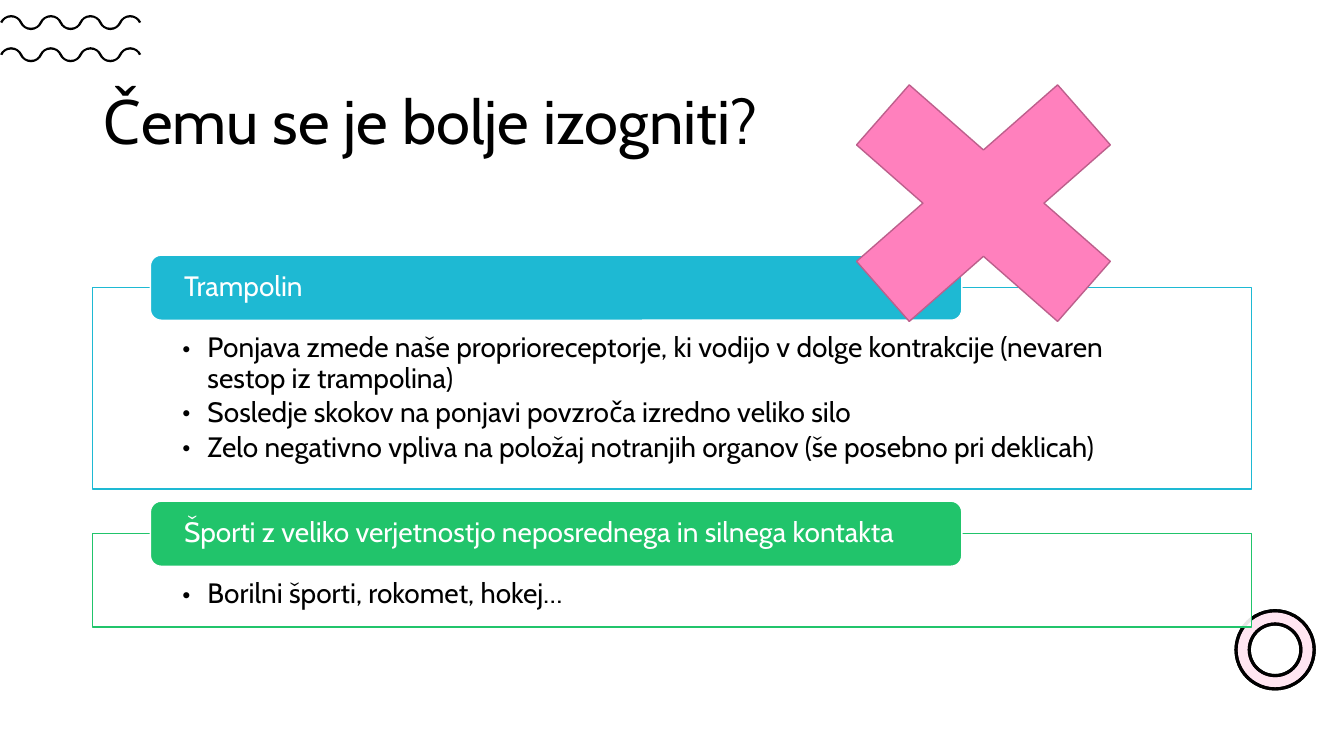
import math
from dataclasses import dataclass
from typing import NamedTuple

import lxml.etree
import pptx
import pptx.dml.color
import pptx.enum.shapes
import pptx.enum.text
import pptx.oxml.ns
import pptx.shapes.autoshape
import pptx.slide
import pptx.text.text
import pptx.util

Cm = pptx.util.Cm
qn = pptx.oxml.ns.qn
Preset = pptx.enum.shapes.MSO_SHAPE
Anchor = pptx.enum.text.MSO_ANCHOR


@dataclass(frozen=True)
class Theme:
    font: str = "Cabin"
    title_size: float = 44
    body_size: float = 20
    black: str = "000000"
    white: str = "FFFFFF"
    pink: str = "FF80BD"
    dark_pink: str = "BD5F8C"
    blue: str = "1EB9D3"
    green: str = "21C46B"


class Box(NamedTuple):
    """Position and size in centimetres."""
    left: float
    top: float
    width: float
    height: float


class Knot(NamedTuple):
    """A curve point and its outgoing handle, in centimetres."""
    x: float
    y: float
    handle_x: float
    handle_y: float


@dataclass(frozen=True)
class Section:
    heading: str
    bullets: tuple[str, ...]
    color: str
    height: float


THEME = Theme()
SECTIONS = (
    Section("Trampolin", (
        "Ponjava zmede naše proprioreceptorje, ki vodijo v dolge kontrakcije "
        "(nevaren sestop iz trampolina)",
        "Sosledje skokov na ponjavi povzroča izredno veliko silo",
        "Zelo negativno vpliva na položaj notranjih organov (še posebno pri deklicah)",
    ), THEME.blue, 5.08),
    Section("Športi z veliko verjetnostjo neposrednega in silnega kontakta",
            ("Borilni športi, rokomet, hokej…",), THEME.green, 2.36),
)
SLIDE_WIDTH, SLIDE_HEIGHT = 33.87, 19.05
SECTIONS_TOP, SECTION_GAP = 7.24, 1.12
MARGIN, CONTENT_WIDTH = 2.33, 29.21
WAVE_MIDDLES = (1.38, 0.57)


def rgb(color: str) -> pptx.dml.color.RGBColor:
    return pptx.dml.color.RGBColor.from_string(color)


def paint(shape: pptx.shapes.autoshape.Shape, fill: str, line: str | None = None,
          line_width: float = 1, opacity: int = 100) -> None:
    shape.shadow.inherit = False
    shape.fill.solid()
    shape.fill.fore_color.rgb = rgb(fill)
    if line is None:
        shape.line.fill.background()
    else:
        shape.line.color.rgb = rgb(line)
        shape.line.width = pptx.util.Pt(line_width)
    if opacity < 100:
        color = shape._element.spPr.find(qn("a:solidFill")).find(qn("a:srgbClr"))
        lxml.etree.SubElement(color, qn("a:alpha"), val=str(opacity * 1000))


def add_preset(slide: pptx.slide.Slide, preset: Preset,
               box: Box) -> pptx.shapes.autoshape.Shape:
    return slide.shapes.add_shape(preset, *(Cm(length) for length in box))


def set_frame(frame: pptx.text.text.TextFrame, anchor: Anchor, side: float,
              top: float, bottom: float) -> None:
    frame.word_wrap = True
    frame.vertical_anchor = anchor
    frame.margin_left = frame.margin_right = Cm(side)
    frame.margin_top, frame.margin_bottom = Cm(top), Cm(bottom)


def write(paragraph: pptx.text.text._Paragraph, text: str, size: float,
          color: str) -> None:
    paragraph.alignment = pptx.enum.text.PP_ALIGN.LEFT
    paragraph.line_spacing = 0.9
    run = paragraph.add_run()
    run.text = text
    run.font.name = THEME.font
    run.font.size = pptx.util.Pt(size)
    run.font.color.rgb = rgb(color)


def add_bullet(paragraph: pptx.text.text._Paragraph) -> None:
    paragraph.level = 1
    paragraph.space_after = pptx.util.Pt(3)
    properties = paragraph._p.get_or_add_pPr()
    properties.set("marL", str(Cm(0.64)))
    properties.set("indent", str(-Cm(0.64)))
    lxml.etree.SubElement(properties, qn("a:buFont"), typeface=THEME.font)
    lxml.etree.SubElement(properties, qn("a:buChar"), char="•")


def add_title(slide: pptx.slide.Slide, text: str) -> None:
    title = slide.shapes.add_textbox(Cm(MARGIN), Cm(1.57), Cm(CONTENT_WIDTH), Cm(3.12))
    set_frame(title.text_frame, Anchor.MIDDLE, 0.25, 0.13, 0.13)
    write(title.text_frame.paragraphs[0], text, THEME.title_size, THEME.black)


def wave_edge(middle: float, offset: float) -> list[Knot]:
    """Knots at each quarter period, moved sideways from the centre line."""
    start, quarter, amplitude = 0.03, 0.25, 0.16
    knots = []
    for index in range(15):
        direction = -1 if index % 4 < 2 else 1
        if index % 2:
            y, handle_x, handle_y = middle + direction * amplitude, 0.12, 0.0
        else:
            y, handle_x, handle_y = middle, 0.04, direction * 0.09
        scale = offset / math.hypot(handle_x, handle_y)
        knots.append(Knot(start + index * quarter + handle_y * scale,
                          y - handle_x * scale, handle_x, handle_y))
    return knots


def add_wave(slide: pptx.slide.Slide, middle: float) -> None:
    upper = wave_edge(middle, 0.03)
    lower = [Knot(knot.x, knot.y, -knot.handle_x, -knot.handle_y)
             for knot in reversed(wave_edge(middle, -0.03))]
    outline = upper + lower
    points = [(Cm(knot.x), Cm(knot.y)) for knot in outline]
    builder = slide.shapes.build_freeform(*points[0])
    builder.add_line_segments(points[1:], close=True)
    wave = builder.convert_to_shape()
    paint(wave, THEME.black)

    # Bend every segment except the end cap
    segments = list(wave._element.iter(qn("a:lnTo")))
    for index, (first, last, segment) in enumerate(zip(outline, outline[1:], segments)):
        if index == len(upper) - 1:
            continue
        curve = lxml.etree.Element(qn("a:cubicBezTo"))
        for x, y in ((first.x + first.handle_x, first.y + first.handle_y),
                     (last.x - last.handle_x, last.y - last.handle_y),
                     (last.x, last.y)):
            lxml.etree.SubElement(curve, qn("a:pt"), x=str(Cm(x) - wave.left),
                                  y=str(Cm(y) - wave.top))
        segment.getparent().replace(segment, curve)


def add_section(slide: pptx.slide.Slide, section: Section, top: float) -> None:
    # Outlined panel with bullets
    panel = add_preset(slide, Preset.RECTANGLE,
                       Box(MARGIN, top, CONTENT_WIDTH, section.height))
    paint(panel, THEME.white, section.color, opacity=90)
    set_frame(panel.text_frame, Anchor.TOP, 2.26, 1.17, 0.41)
    for index, bullet in enumerate(section.bullets):
        frame = panel.text_frame
        paragraph = frame.add_paragraph() if index else frame.paragraphs[0]
        write(paragraph, bullet, THEME.body_size, THEME.black)
        add_bullet(paragraph)

    # Heading tab across the panel's top edge
    tab = add_preset(slide, Preset.ROUNDED_RECTANGLE, Box(3.79, top - 0.81, 20.45, 1.64))
    paint(tab, section.color, THEME.white)
    set_frame(tab.text_frame, Anchor.MIDDLE, 0.77, 0, 0)
    write(tab.text_frame.paragraphs[0], section.heading, THEME.body_size, THEME.white)


def main() -> None:
    presentation = pptx.Presentation()
    presentation.slide_width, presentation.slide_height = Cm(SLIDE_WIDTH), Cm(SLIDE_HEIGHT)
    slide = presentation.slides.add_slide(presentation.slide_layouts[6])

    # White backdrop and title
    backdrop = add_preset(slide, Preset.RECTANGLE, Box(0, 0, SLIDE_WIDTH, SLIDE_HEIGHT))
    paint(backdrop, THEME.white)
    add_title(slide, "Čemu se je bolje izogniti?")

    # Corner decorations: waves, and a ring tinted over white
    for middle in WAVE_MIDDLES:
        add_wave(slide, middle)
    for color, opacity in ((THEME.white, 100), (THEME.pink, 20)):
        ring = add_preset(slide, Preset.DONUT, Box(31.15, 15.39, 1.97, 1.97))
        ring.adjustments[0] = 0.17
        paint(ring, color, THEME.black, 2.25, opacity)

    # Sections stacked with an equal gap
    top = SECTIONS_TOP
    for section in SECTIONS:
        add_section(slide, section, top)
        top += section.height + SECTION_GAP

    # Large cross
    cross = add_preset(slide, Preset.MATH_MULTIPLY, Box(19.91, 0.84, 9.75, 8.56))
    paint(cross, THEME.pink, THEME.dark_pink)

    presentation.save("out.pptx")


if __name__ == "__main__":
    main()
